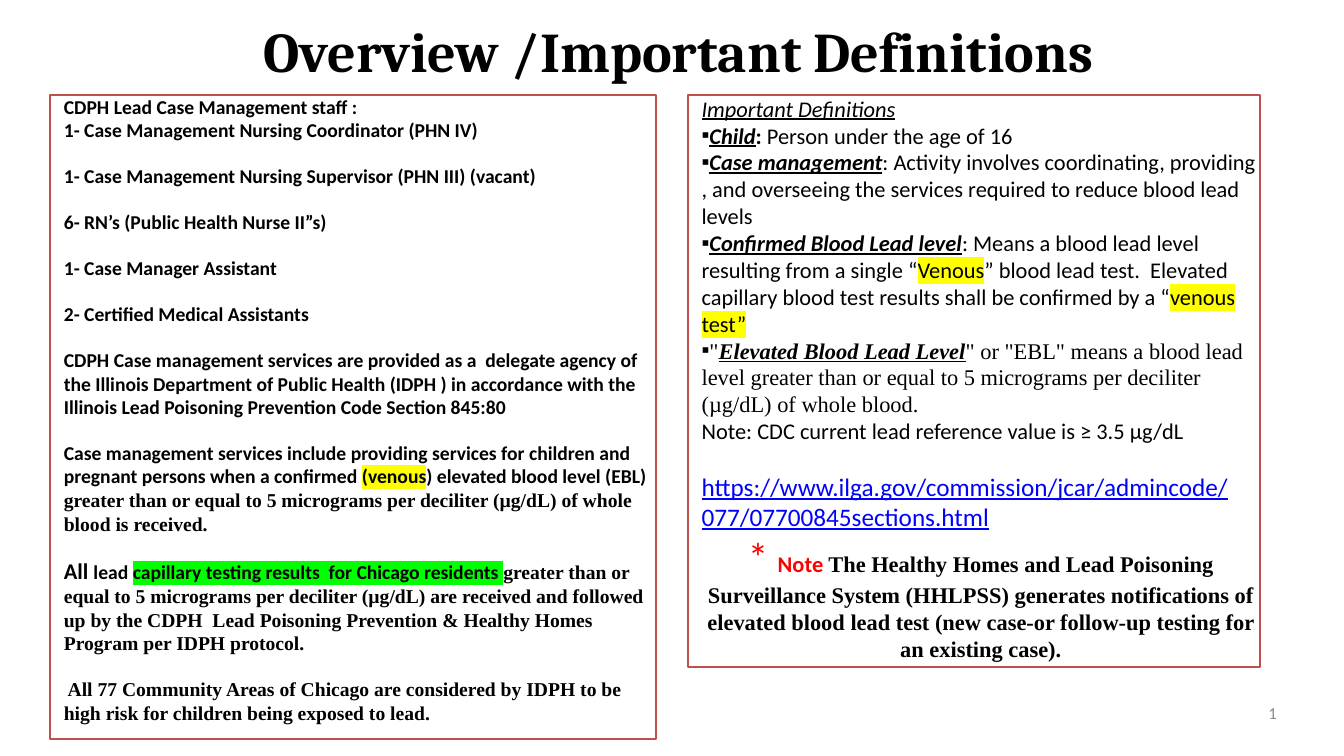
from lxml import etree
from pptx import Presentation, util as u
from pptx.dml.color import RGBColor
from pptx.enum import text
from pptx.oxml.ns import qn

UNIT = 0.25  # grid step in inches: 80 columns by 45 rows
TOP = 5.64
SERIF = "Times New Roman"
YELLOW, GREEN = "FFFF00", "00FF00"
TERM = dict(bold=True, italic=True, underline=True)

# A paragraph is (paragraph format, [(text, run format), ...]).
GAP = dict(before=24)
BULLET = dict(bullet="▪")
STAFF = [
    ({}, [("CDPH Lead Case Management staff :", {})]),
    ({}, [("1- Case Management Nursing Coordinator (PHN IV)", {})]),
    (GAP, [("1- Case Management Nursing Supervisor (PHN III) (vacant)", {})]),
    (GAP, [("6- RN’s (Public Health Nurse II”s)", {})]),
    (GAP, [("1- Case Manager Assistant", {})]),
    (GAP, [("2- Certified Medical Assistants", {})]),
    (GAP, [("CDPH Case management services are provided as a  delegate agency of "
            "the Illinois Department of Public Health (IDPH ) in accordance with the "
            "Illinois Lead Poisoning Prevention Code Section 845:80", {})]),
    (GAP, [("Case management services include providing services for children and "
            "pregnant persons when a confirmed ", {}),
           ("(venous", dict(highlight=YELLOW)),
           (") elevated blood level (EBL) ", {}),
           ("greater than or equal to 5 micrograms per deciliter (µg/dL) of whole "
            "blood is received.", dict(font=SERIF))]),
    (GAP, [("All ", dict(size=24)),
           ("lead ", {}),
           ("capillary testing results  for Chicago residents ", dict(highlight=GREEN)),
           ("greater than or equal to 5 micrograms per deciliter (µg/dL) are received "
            "and followed up by the CDPH  Lead Poisoning Prevention & Healthy Homes "
            "Program per IDPH protocol.", dict(font=SERIF))]),
    (GAP, [(" All 77 Community Areas of Chicago are considered by IDPH to be high risk "
            "for children being exposed to lead.", dict(font=SERIF))]),
]
DEFINITIONS = [
    ({}, [("Important Definitions", dict(italic=True, underline=True))]),
    (BULLET, [("Child", TERM), (": ", dict(bold=True)),
              ("Person under the age of 16", {})]),
    (BULLET, [("Case management", TERM),
              (": Activity involves coordinating, providing , and overseeing the "
               "services required to reduce blood lead levels", {})]),
    (BULLET, [("Confirmed Blood Lead level", TERM),
              (": Means a blood lead level resulting from a single “", {}),
              ("Venous", dict(highlight=YELLOW)),
              ("” blood lead test.  Elevated capillary blood test results shall be "
               "confirmed by a “", {}),
              ("venous test”", dict(highlight=YELLOW))]),
    (BULLET, [('"', dict(font=SERIF)),
              ("Elevated Blood Lead Level", dict(TERM, font=SERIF)),
              ('" or "EBL" means a blood lead level greater than or equal to 5 '
               "micrograms per deciliter (µg/dL) of whole blood.", dict(font=SERIF))]),
    ({}, [("Note: CDC current lead reference value is ≥ 3.5 µg/dL", {})]),
    (dict(before=29),
     [("https://www.ilga.gov/commission/jcar/admincode/077/07700845sections.html",
       dict(size=27, color="0000FF", underline=True))]),
    (dict(align="CENTER"),
     [("* ", dict(size=44, color="FF0000")),
      ("Note ", dict(color="FF0000", bold=True)),
      ("The Healthy Homes and Lead Poisoning Surveillance System (HHLPSS) generates "
       "notifications of elevated blood lead test (new case-or follow-up testing for "
       "an existing case).", dict(font=SERIF, bold=True))]),
]
PANELS = [  # left and width in columns, height in rows
    (3, 36.04, 38.36, STAFF, dict(size=21, bold=True)),
    (40.96, 34.04, 34.08, DEFINITIONS, dict(size=24)),
]


def rgb(value):
    return RGBColor.from_string(value)


def grid(*cells):
    return [u.Inches(c * UNIT) for c in cells]


def place(sp, *cells):
    sp.left, sp.top, sp.width, sp.height = grid(*cells)


def set_frame(tf, insets, anchor="TOP"):
    tf.word_wrap = True
    tf.auto_size = text.MSO_AUTO_SIZE.NONE
    tf.vertical_anchor = getattr(text.MSO_ANCHOR, anchor)
    tf.margin_left, tf.margin_top, tf.margin_right, tf.margin_bottom = map(u.Inches, insets)


def add_run(p, words, font="Calibri", size=24, color="000000", bold=False,
            italic=False, underline=False, highlight=None):
    r = p.add_run()
    r.text = words
    f = r.font
    f.name, f.size = font, u.Pt(size)
    f.bold, f.italic, f.underline = bold, italic, underline
    f.color.rgb = rgb(color)
    if highlight:
        mark = etree.Element(qn("a:highlight"))
        etree.SubElement(mark, qn("a:srgbClr"), val=highlight)
        r._r.get_or_add_rPr().find(qn("a:latin")).addprevious(mark)


def format_paragraph(p, align="LEFT", before=0, bullet=None):
    p.alignment = getattr(text.PP_ALIGN, align)
    p.space_before, p.space_after = u.Pt(before), u.Pt(0)
    p.line_spacing = 1.0
    pPr = p._p.get_or_add_pPr()
    pPr.set("marL", "0")
    pPr.set("indent", "0")
    if bullet:
        etree.SubElement(pPr, qn("a:buChar"), char=bullet)
    else:
        etree.SubElement(pPr, qn("a:buNone"))


def write(tf, paragraphs, **base):
    """Fill a text frame; base is the run format that each run may override."""
    for i, (layout, runs) in enumerate(paragraphs):
        p = tf.add_paragraph() if i else tf.paragraphs[0]
        format_paragraph(p, **layout)
        for words, style in runs:
            add_run(p, words, **{**base, **style})


prs = Presentation()
prs.slide_width, prs.slide_height = grid(80, 45)
s = prs.slides.add_slide(prs.slide_layouts[3])
title, *bodies = s.placeholders

place(title, 7.04, 0.48, 65.92, 5)
set_frame(title.text_frame, (0.15, 0.07, 0.15, 0.07), "MIDDLE")
write(title.text_frame,
      [(dict(align="CENTER"), [(" Overview /Important Definitions", {})])],
      font="Cambria", size=60, bold=True)

for sp, (left, width, height, paragraphs, base) in zip(bodies, PANELS):
    place(sp, left, TOP, width, height)
    sp.fill.solid()
    sp.fill.fore_color.rgb = rgb("FFFFFF")
    sp.line.color.rgb = rgb("C0504D")
    sp.line.width = u.Pt(2)
    set_frame(sp.text_frame, (0.2, 0, 0, 0))
    write(sp.text_frame, paragraphs, **base)

number = s.shapes.add_textbox(*grid(57.6, 41.84, 18.4, 1.2))
set_frame(number.text_frame, (0, 0, 0, 0))
write(number.text_frame, [(dict(align="RIGHT"), [("1", {})])], size=18, color="8C8C8C")

prs.save("out.pptx")
